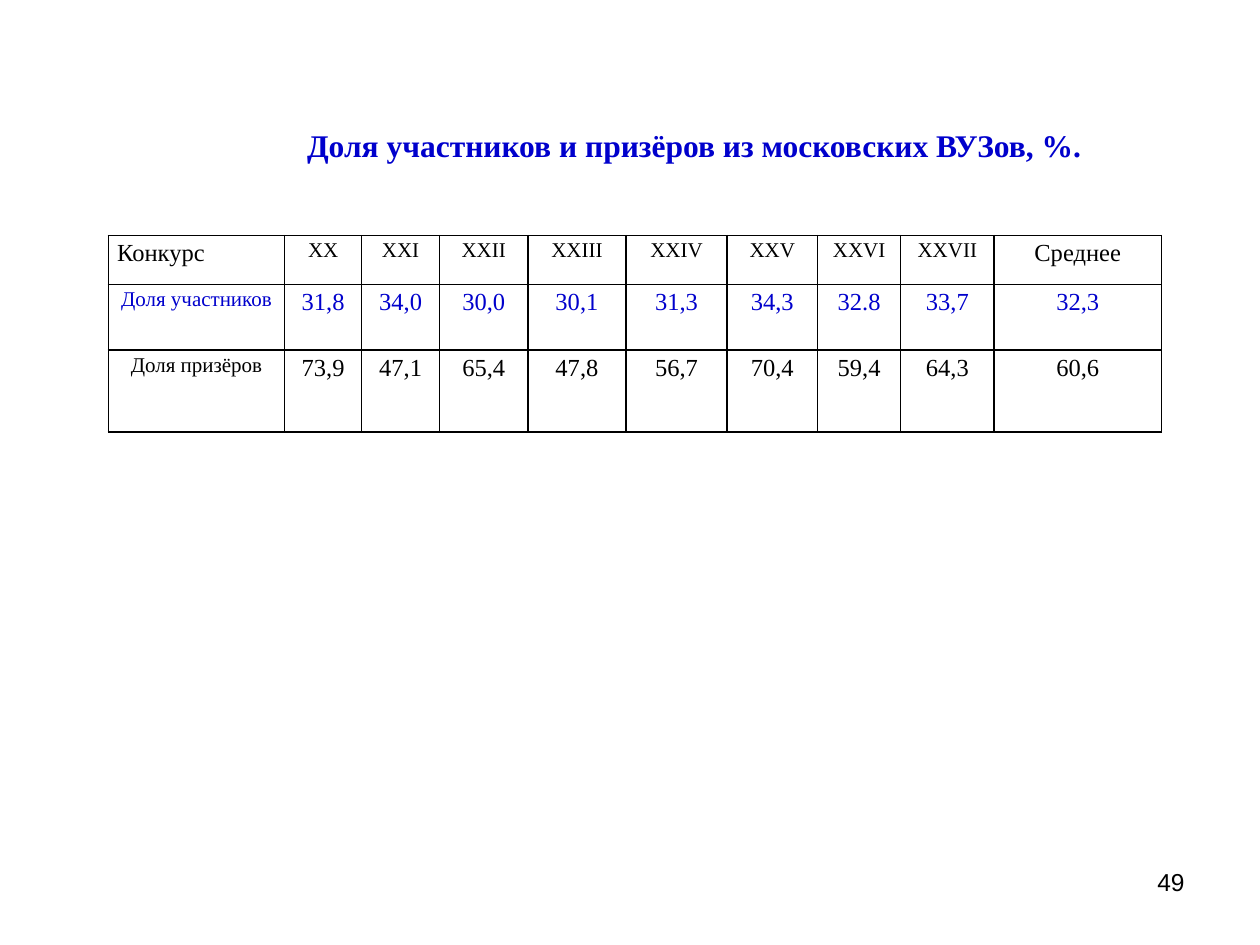
import pptx
import pptx.util
import pptx.dml.color
import pptx.enum.text
import pptx.oxml
import pptx.oxml.ns

# Content
TITLE = "Доля участников и призёров из московских ВУЗов, %."
PAGE_NUMBER = "49"
ROWS = [
    ["Конкурс", "XX", "XXI", "XXII", "XXIII", "XXIV", "XXV", "XXVI", "XXVII", "Среднее"],
    ["Доля участников", "31,8", "34,0", "30,0", "30,1", "31,3", "34,3", "32.8", "33,7", "32,3"],
    ["Доля призёров", "73,9", "47,1", "65,4", "47,8", "56,7", "70,4", "59,4", "64,3", "60,6"],
]
ROW_COLORS = ["000000", "0000CC", "000000"]

# Geometry in inches
SLIDE_SIZE = (10, 7.5)
TITLE_BOX = (1.02, 0, 8.98, 1.35)
NUMBER_BOX = (7.17, 6.83, 2.33, 0.52)
TABLE_CORNER = (0.86, 1.87)
COLUMN_WIDTHS = [1.4, 0.61, 0.62, 0.7, 0.78, 0.8, 0.72, 0.66, 0.74, 1.33]
ROW_HEIGHTS = [0.39, 0.52, 0.65]

ALIGN = pptx.enum.text.PP_ALIGN
ANCHOR = pptx.enum.text.MSO_ANCHOR
inches = pptx.util.Inches


def color(value):
    return pptx.dml.color.RGBColor.from_string(value)


def set_attributes(target, values):
    for name, value in values.items():
        setattr(target, name, value)


def write(frame, text, size, hex_color, alignment, font="Times New Roman", bold=False, spacing=1.0):
    paragraph = frame.paragraphs[0]
    set_attributes(paragraph, {"alignment": alignment, "line_spacing": spacing})
    run = paragraph.add_run()
    run.text = text
    set_attributes(run.font, {"name": font, "size": pptx.util.Pt(size), "bold": bold})
    run.font.color.rgb = color(hex_color)


def add_borders(cell, hex_color="000000", width=1):
    properties = cell._tc.get_or_add_tcPr()
    for position, side in enumerate(("lnL", "lnR", "lnT", "lnB")):
        properties.insert(position, pptx.oxml.parse_xml(
            f'<a:{side} {pptx.oxml.ns.nsdecls("a")} w="{pptx.util.Pt(width)}">'
            f'<a:solidFill><a:srgbClr val="{hex_color}"/></a:solidFill></a:{side}>'))


def cell_style(row, column):
    """Numerals in the header and row labels are smaller than the rest."""
    last = len(COLUMN_WIDTHS) - 1
    small = 0 < column < last if row == 0 else column == 0
    alignment = ALIGN.JUSTIFY if row == column == 0 else ALIGN.CENTER
    return 12 if small else 14, ROW_COLORS[row], alignment


presentation = pptx.Presentation()
presentation.slide_width, presentation.slide_height = map(inches, SLIDE_SIZE)
slide = presentation.slides.add_slide(presentation.slide_layouts.get_by_name("Title Only"))

# Page number
number = slide.shapes.add_textbox(*map(inches, NUMBER_BOX))
number.text_frame.word_wrap = True
write(number.text_frame, PAGE_NUMBER, 14, "000000", ALIGN.RIGHT, font="Arial")

# Table
table = slide.shapes.add_table(
    len(ROWS), len(COLUMN_WIDTHS), *map(inches, TABLE_CORNER),
    inches(sum(COLUMN_WIDTHS)), inches(sum(ROW_HEIGHTS))).table
set_attributes(table, {"first_row": False, "horz_banding": False})
for table_column, width in zip(table.columns, COLUMN_WIDTHS):
    table_column.width = inches(width)
for table_row, height in zip(table.rows, ROW_HEIGHTS):
    table_row.height = inches(height)
for row, texts in enumerate(ROWS):
    for column, text in enumerate(texts):
        cell = table.cell(row, column)
        set_attributes(cell, {
            "margin_left": inches(0.07), "margin_right": inches(0.07),
            "margin_top": 0, "margin_bottom": 0, "vertical_anchor": ANCHOR.TOP})
        cell.fill.background()
        add_borders(cell)
        write(cell.text_frame, text, *cell_style(row, column), spacing=1.15)

# Title
title = slide.shapes.title
set_attributes(title, dict(zip(("left", "top", "width", "height"), map(inches, TITLE_BOX))))
set_attributes(title.text_frame, {
    "word_wrap": True, "vertical_anchor": ANCHOR.BOTTOM,
    "auto_size": pptx.enum.text.MSO_AUTO_SIZE.NONE})
write(title.text_frame, TITLE, 18, "0000CC", ALIGN.CENTER, bold=True)

presentation.save("out.pptx")
